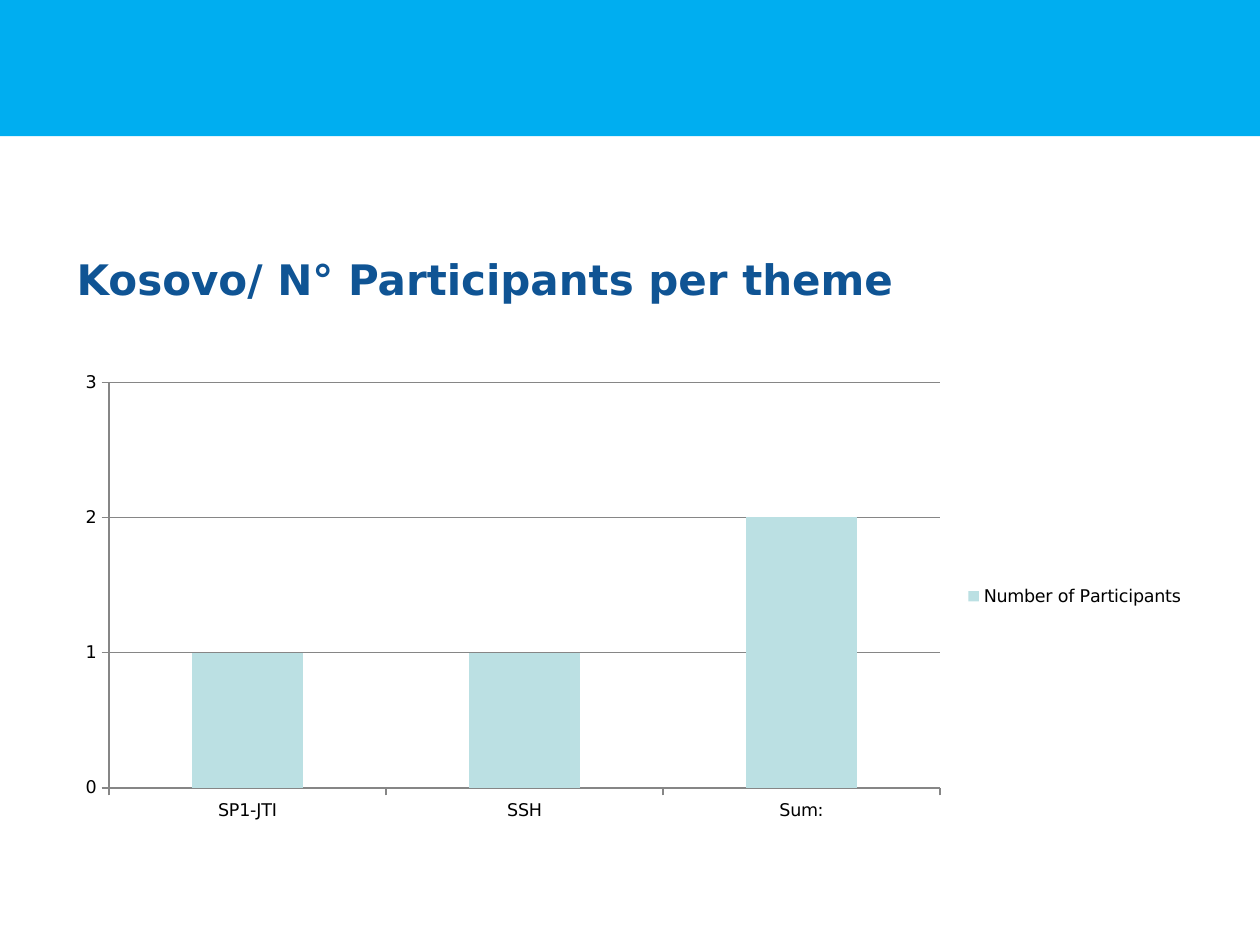
from pptx import Presentation
from pptx.chart.data import CategoryChartData
from pptx.dml.color import RGBColor
from pptx.enum.chart import XL_CHART_TYPE, XL_LEGEND_POSITION, XL_TICK_MARK
from pptx.enum.shapes import MSO_SHAPE
from pptx.enum.text import MSO_ANCHOR
from pptx.util import Pt

RECTANGLE = MSO_SHAPE.RECTANGLE
MIDDLE = MSO_ANCHOR.MIDDLE
COLUMNS = XL_CHART_TYPE.COLUMN_CLUSTERED
LEGEND_RIGHT = XL_LEGEND_POSITION.RIGHT
TICK_OUTSIDE = XL_TICK_MARK.OUTSIDE

FONT = "DejaVu Sans"
COLORS = {
    "banner": "00AEF0",
    "title": "0F5494",
    "bars": "BBE0E3",
    "text": "000000",
    "lines": "868686",
}


def color(name):
    return RGBColor.from_string(COLORS[name])


def style_font(font, size, name):
    font.name = FONT
    font.size = Pt(size)
    font.color.rgb = color(name)


prs = Presentation()
prs.slide_width = Pt(720)
prs.slide_height = Pt(540)
slide = prs.slides.add_slide(prs.slide_layouts[6])

banner = slide.shapes.add_shape(RECTANGLE, 0, 0, Pt(720), Pt(77.75))
banner.shadow.inherit = False
banner.fill.solid()
banner.fill.fore_color.rgb = color("banner")
banner.line.fill.background()

title = slide.shapes.add_textbox(Pt(36.75), Pt(122.5), Pt(648), Pt(73.5)).text_frame
title.word_wrap = True
title.vertical_anchor = MIDDLE
heading = title.paragraphs[0]
heading.text = "Kosovo/ N° Participants per theme"
style_font(heading.font, 24, "title")
heading.font.bold = True

participants = CategoryChartData(number_format="#,##0")
participants.categories = ["SP1-JTI", "SSH", "Sum:"]
participants.add_series("Number of Participants", [1, 1, 2])
chart = slide.shapes.add_chart(
    COLUMNS, Pt(36), Pt(207.5), Pt(648), Pt(266.5), participants
).chart
chart.has_title = False
style_font(chart.font, 10, "text")
chart.has_legend = True
chart.legend.position = LEGEND_RIGHT
chart.legend.include_in_layout = False

plot = chart.plots[0]
plot.gap_width = 150
plot.vary_by_categories = False
bars = plot.series[0].format
bars.fill.solid()
bars.fill.fore_color.rgb = color("bars")

themes, counts = chart.category_axis, chart.value_axis
counts.minimum_scale = 0
counts.maximum_scale = 3
counts.major_unit = 1
counts.has_major_gridlines = True
counts.tick_labels.number_format = "#,##0"
counts.tick_labels.number_format_is_linked = False
for axis in (themes, counts):
    axis.major_tick_mark = TICK_OUTSIDE
for ruled in (themes, counts, counts.major_gridlines):
    ruled.format.line.color.rgb = color("lines")
    ruled.format.line.width = Pt(0.75)

prs.save("out.pptx")
